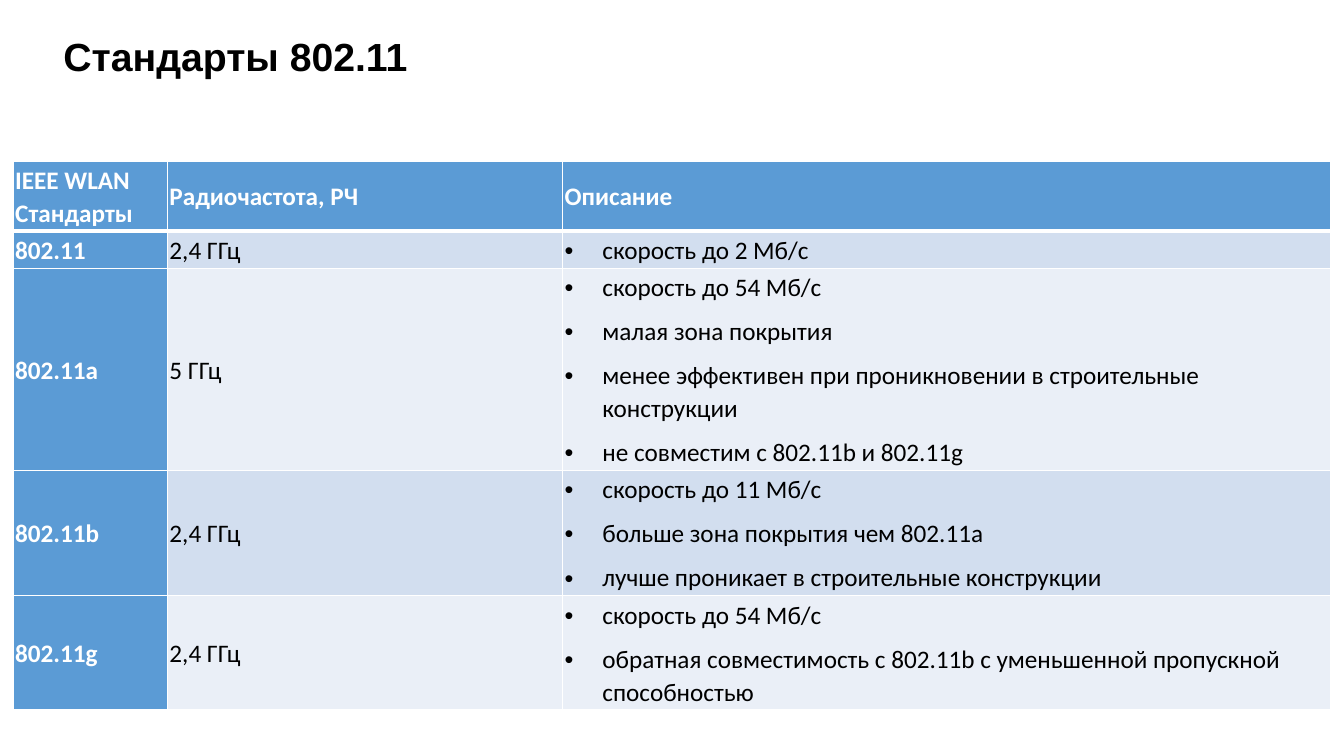
import dataclasses
import typing

import lxml.etree
import pptx
import pptx.dml.color
import pptx.enum.text
import pptx.oxml
import pptx.oxml.ns
import pptx.util

Pt = pptx.util.Pt


@dataclasses.dataclass(frozen=True)
class Theme:
    head: str = "5B9BD5"
    bands: tuple[str, str] = ("D2DEEF", "EAEFF7")
    light: str = "FFFFFF"
    dark: str = "000000"
    title: float = 28
    body: float = 18
    title_font: str = "Arial"
    body_font: str = "Calibri"


@dataclasses.dataclass(frozen=True)
class Norm:
    name: str
    band: str
    notes: tuple[str, ...]
    high: float


THEME = Theme()
HEADS = ("IEEE WLAN Стандарты", "Радиочастота, РЧ", "Описание")
HEAD_HIGH = 49
WIDTHS = (110.2, 282.2, 548.6)
NORMS = (
    Norm("802.11", "2,4 ГГц", ("скорость до 2 Мб/с",), 26),
    Norm("802.11a", "5 ГГц", (
        "скорость до 54 Мб/с",
        "малая зона покрытия",
        "менее эффективен при проникновении в строительные конструкции",
        "не совместим с 802.11b и 802.11g",
    ), 143),
    Norm("802.11b", "2,4 ГГц", (
        "скорость до 11 Мб/с",
        "больше зона покрытия чем 802.11a",
        "лучше проникает в строительные конструкции",
    ), 89),
    Norm("802.11g", "2,4 ГГц", (
        "скорость до 54 Мб/с",
        "обратная совместимость с 802.11b с уменьшенной пропускной способностью",
    ), 79),
)


def rgb(code: str) -> pptx.dml.color.RGBColor:
    return pptx.dml.color.RGBColor.from_string(code)


def add(root: typing.Any, tag: str, **attrs: typing.Any) -> typing.Any:
    texts = {key: str(value) for key, value in attrs.items()}
    return lxml.etree.SubElement(root, pptx.oxml.ns.qn(tag), texts)


def style(para: typing.Any, face: str, size: float, color: str, bold: bool) -> None:
    font = para.font
    font.name, font.size, font.bold = face, Pt(size), bold
    font.color.rgb = rgb(color)


def bullet(para: typing.Any) -> None:
    props = para._p.get_or_add_pPr()
    props.set("marL", str(Pt(27)))
    props.set("indent", str(Pt(-27)))
    add(props, "a:buFont", typeface="Arial")
    add(props, "a:buChar", char="•")
    add(add(props, "a:tabLst"), "a:tab", pos=Pt(36), algn="l")


def edge(cell: typing.Any, top: float, base: float) -> None:
    props = cell._tc.get_or_add_tcPr()
    for side, width in zip("LRTB", (1, 1, top, base)):
        line = add(props, f"a:ln{side}", w=Pt(width))
        add(add(line, "a:solidFill"), "a:srgbClr", val=THEME.light)


def write(cell: typing.Any, lines: tuple[str, ...], fill: str, row: int, col: int) -> None:
    edge(cell, 3 if row == 1 else 1, 3 if row == 0 else 1)
    cell.fill.solid()
    cell.fill.fore_color.rgb = rgb(fill)
    cell.vertical_anchor = pptx.enum.text.MSO_ANCHOR.MIDDLE
    cell.margin_left = cell.margin_right = Pt(1.5)
    cell.margin_top = cell.margin_bottom = Pt(1.5)
    label = row == 0 or col == 0
    cell.text_frame.text = "\n".join(lines)
    for para in cell.text_frame.paragraphs:
        if row and col == 2:
            bullet(para)
        para.line_spacing = 1.07
        para.space_after = Pt(0 if col == 0 and row > 1 else 8)
        style(para, THEME.body_font, THEME.body, THEME.light if label else THEME.dark, label)


def draw_table(slide: typing.Any) -> None:
    highs = (HEAD_HIGH, *(norm.high for norm in NORMS))
    frame = slide.shapes.add_table(
        len(highs), len(WIDTHS), Pt(9.4), Pt(115.2), Pt(sum(WIDTHS)), Pt(sum(highs)))
    table = frame.table
    table.first_row = table.horz_banding = False
    for col, width in zip(table.columns, WIDTHS):
        col.width = Pt(width)
    for row, high in zip(table.rows, highs):
        row.height = Pt(high)
    for col, head in enumerate(HEADS):
        write(table.cell(0, col), (head,), THEME.head, 0, col)
    for row, norm in enumerate(NORMS, 1):
        band = THEME.bands[(row - 1) % 2]
        for col, lines in enumerate(((norm.name,), (norm.band,), norm.notes)):
            write(table.cell(row, col), lines, band if col else THEME.head, row, col)


def draw_title(slide: typing.Any) -> None:
    frame = slide.shapes.add_textbox(Pt(38.2), Pt(19.4), Pt(483), Pt(41)).text_frame
    frame.word_wrap = True
    frame.auto_size = pptx.enum.text.MSO_AUTO_SIZE.SHAPE_TO_FIT_TEXT
    frame.text = "Стандарты 802.11"
    para = frame.paragraphs[0]
    para.space_after = Pt(12)
    style(para, THEME.title_font, THEME.title, THEME.dark, True)


def main() -> None:
    deck = pptx.Presentation()
    deck.slide_width, deck.slide_height = Pt(960), Pt(540)
    slide = deck.slides.add_slide(deck.slide_layouts[6])
    draw_table(slide)
    draw_title(slide)
    deck.save("out.pptx")


if __name__ == "__main__":
    main()
